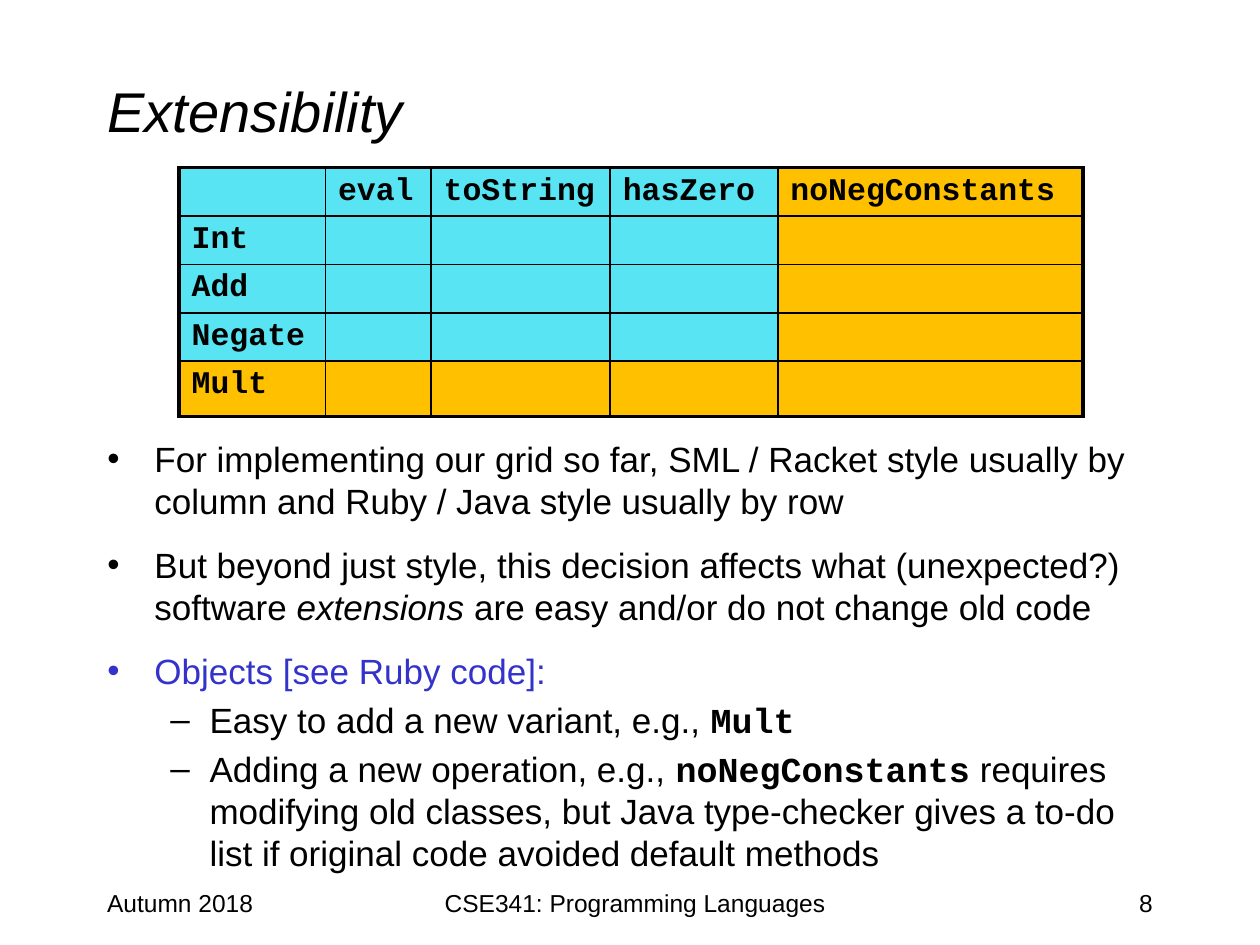
from lxml.etree import SubElement
from pptx import Presentation
from pptx.dml.color import RGBColor
from pptx.enum.text import MSO_ANCHOR, MSO_AUTO_SIZE, PP_ALIGN
from pptx.oxml.ns import qn
from pptx.util import Cm, Pt

HUES = {"ink": "000000", "link": "3333CC", "old": "59E4F3", "new": "FFC000"}
SANS = {"name": "Arial", "bold": False, "italic": False}
CODE = {"name": "Courier New", "bold": True, "italic": False}
SLANT = {**SANS, "italic": True}
HEADS = ["", "eval", "toString", "hasZero", "noNegConstants"]
KINDS = ["Int", "Add", "Negate", "Mult"]
WIDTHS = [2.95, 2.13, 3.61, 3.38, 6.15]
HEIGHTS = [0.97] * 4 + [1.12]
LEVELS = [
    {"char": "•", "left": 0.95, "hang": 0.95},
    {"char": "–", "left": 2.06, "hang": 0.79},
]
POINTS = [
    (0, 4, "ink", [("For implementing our grid so far, SML / Racket style usually by "
                    "column and Ruby / Java style usually by row", SANS)]),
    (0, 12.5, "ink", [("But beyond just style, this decision affects what (unexpected?) "
                       "software ", SANS), ("extensions", SLANT),
                      (" are easy and/or do not change old code", SANS)]),
    (0, 12.5, "link", [("Objects [see Ruby code]:", SANS)]),
    (1, 4, "ink", [("Easy to add a new variant, e.g., ", SANS), ("Mult", CODE)]),
    (1, 4, "ink", [("Adding a new operation, e.g., ", SANS), ("noNegConstants", CODE),
                   (" requires modifying old classes, but Java type-checker gives a "
                    "to-do list if original code avoided default methods", SANS)]),
]
NOTES = [
    (1.91, 5.29, "Autumn 2018", PP_ALIGN.LEFT),
    (8.04, 9.53, "CSE341: Programming Languages", PP_ALIGN.CENTER),
    (18.2, 5.29, "8", PP_ALIGN.RIGHT),
]


def apply(item, vals):
    """Set each named value on an object."""
    for key, val in vals.items():
        setattr(item, key, val)


def place(shape, left, top, width, height):
    """Move and size a shape in centimetres."""
    apply(shape, {"left": Cm(left), "top": Cm(top),
                  "width": Cm(width), "height": Cm(height)})


def write(para, text, size, style, hue="ink"):
    """Add a formatted run to a paragraph."""
    run = para.add_run()
    run.text = text
    apply(run.font, {"size": Pt(size), **style})
    run.font.color.rgb = RGBColor.from_string(HUES[hue])


def mark(para, level):
    """Give a paragraph its bullet and indent."""
    rule = LEVELS[level]
    para.level = level
    props = para._p.get_or_add_pPr()
    props.set("marL", str(Cm(rule["left"])))
    props.set("indent", str(-Cm(rule["hang"])))
    SubElement(props, qn("a:buFont"), typeface="Arial")
    SubElement(props, qn("a:buChar"), char=rule["char"])


def edge(cell, side, width):
    """Draw one border of a cell."""
    line = SubElement(cell._tc.get_or_add_tcPr(), qn(f"a:ln{side}"), w=str(Pt(width)))
    fill = SubElement(line, qn("a:solidFill"))
    SubElement(fill, qn("a:srgbClr"), val=HUES["ink"])


def add_title(slide):
    """Fill the title placeholder."""
    title = slide.shapes.title
    place(title, 1.91, 0.64, 21.59, 3.18)
    apply(title.text_frame, {"vertical_anchor": MSO_ANCHOR.MIDDLE, "word_wrap": True,
                             "auto_size": MSO_AUTO_SIZE.NONE})
    para = title.text_frame.paragraphs[0]
    para.alignment = PP_ALIGN.LEFT
    write(para, "Extensibility", 32, SLANT)


def add_grid(slide):
    """Build the table of variants and operations."""
    last = len(HEADS) - 1
    frame = slide.shapes.add_table(last + 1, last + 1, Cm(3.61), Cm(3.38),
                                   Cm(sum(WIDTHS)), Cm(sum(HEIGHTS)))
    grid = frame.table
    apply(grid, {"first_row": False, "horz_banding": False})
    for col, width in zip(grid.columns, WIDTHS):
        col.width = Cm(width)
    for row, height in zip(grid.rows, HEIGHTS):
        row.height = Cm(height)
    for r, kind in enumerate([""] + KINDS):
        for c, head in enumerate(HEADS):
            cell = grid.cell(r, c)
            outer = {"L": c == 0, "R": c == last, "T": r == 0, "B": r == last}
            for side, thick in outer.items():
                edge(cell, side, 2.25 if thick else 1)
            cell.fill.solid()
            hue = "new" if last in (r, c) else "old"
            cell.fill.fore_color.rgb = RGBColor.from_string(HUES[hue])
            text = head if r == 0 else kind if c == 0 else ""
            para = cell.text_frame.paragraphs[0]
            if text:
                write(para, text, 18, CODE)
            else:
                SubElement(para._p, qn("a:endParaRPr"), sz="1200")


def add_list(slide):
    """Fill the body placeholder with bullets."""
    body = slide.placeholders[1]
    place(body, 1.91, 8.69, 21.59, 9.32)
    frame = body.text_frame
    apply(frame, {"word_wrap": True, "auto_size": MSO_AUTO_SIZE.NONE})
    for i, (level, gap, hue, runs) in enumerate(POINTS):
        para = frame.add_paragraph() if i else frame.paragraphs[0]
        apply(para, {"space_before": Pt(gap), "line_spacing": Pt(24)})
        mark(para, level)
        for text, style in runs:
            write(para, text, 20, style, hue)


def add_note(slide, left, width, text, align):
    """Add one footer text."""
    box = slide.shapes.add_textbox(Cm(left), Cm(17.78), Cm(width), Cm(1.27))
    box.text_frame.word_wrap = True
    para = box.text_frame.paragraphs[0]
    para.alignment = align
    write(para, text, 14, SANS)


def main():
    """Build and save the slide."""
    deck = Presentation()
    apply(deck, {"slide_width": Cm(25.4), "slide_height": Cm(19.05)})
    slide = deck.slides.add_slide(deck.slide_layouts[1])
    add_title(slide)
    add_list(slide)
    add_grid(slide)
    for note in NOTES:
        add_note(slide, *note)
    deck.save("out.pptx")


if __name__ == "__main__":
    main()
